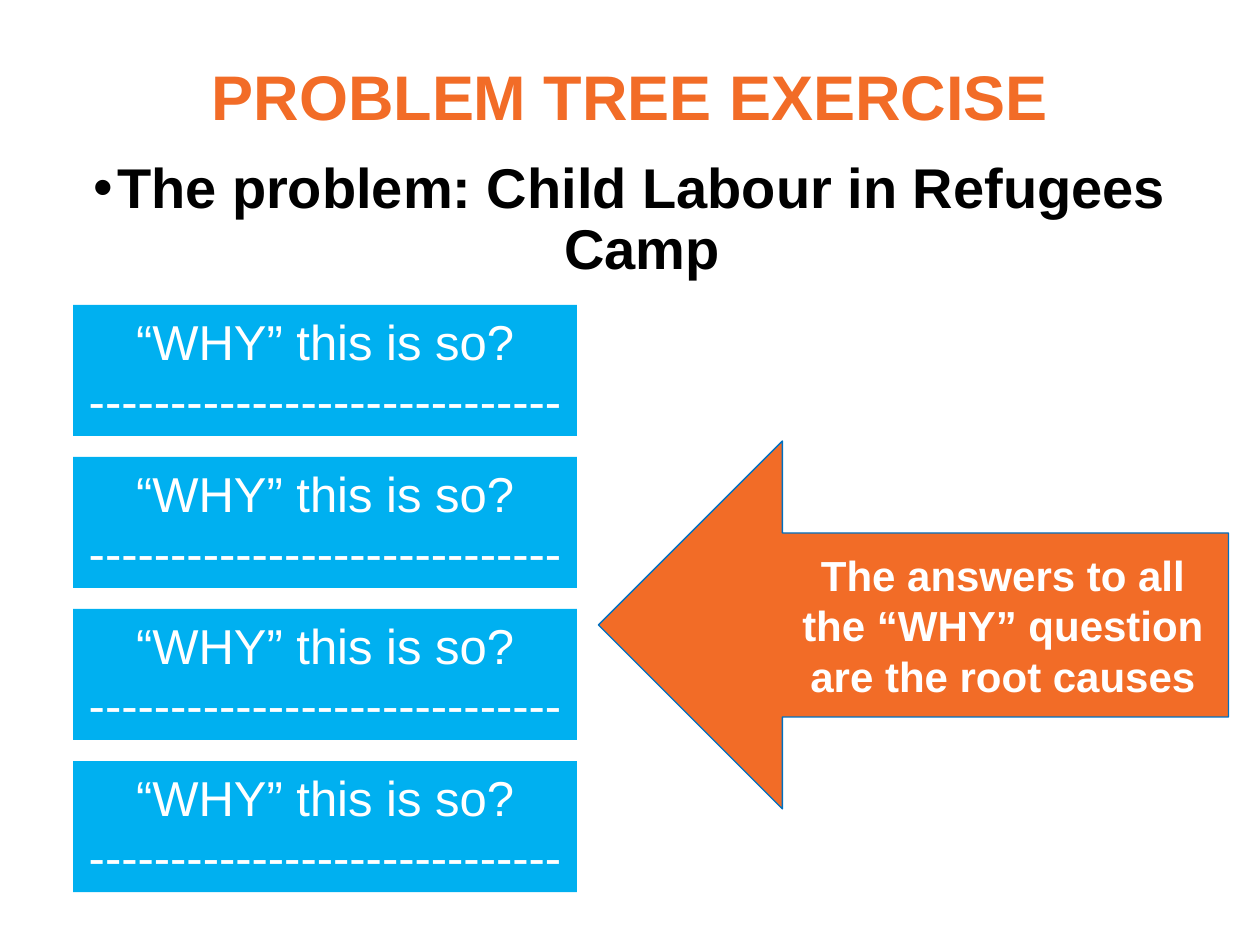
from pptx import Presentation
from pptx.dml.color import RGBColor
from pptx.enum.shapes import MSO_SHAPE
from pptx.enum.text import MSO_ANCHOR, MSO_AUTO_SIZE, PP_ALIGN
from pptx.oxml import parse_xml
from pptx.oxml.ns import nsdecls
from pptx.util import Inches, Pt

TITLE = "PROBLEM TREE EXERCISE"
ISSUE = "The problem: Child Labour in Refugees Camp"
WHYS = [["“WHY” this is so?", "-" * 29]] * 4
ANSWER = "The answers to all the “WHY” question are the root causes"

THEME = {
    "font": "Arial",
    "orange": RGBColor(0xF2, 0x6C, 0x27),
    "sky": RGBColor(0x00, 0xB0, 0xF0),
    "edge": RGBColor(0x00, 0x70, 0xC0),
    "black": RGBColor(0, 0, 0),
    "white": RGBColor(255, 255, 255),
    "title": Pt(36), "issue": Pt(32), "why": Pt(28), "answer": Pt(24),
}
TOP, LAST, LEFT, WIDE, HIGH = 2.42, 6.04, 0.58, 4, 1.04


def put(obj, vals):
    for name, val in vals.items():
        setattr(obj, name, val)


def place(shape, *box):
    names = ("left", "top", "width", "height")
    put(shape, dict(zip(names, map(Inches, box))))


def write(shape, lines, size, color, bold, **para):
    frame = shape.text_frame
    put(frame, {"text": "\n".join(lines), "word_wrap": True,
                "auto_size": MSO_AUTO_SIZE.NONE,
                "vertical_anchor": MSO_ANCHOR.MIDDLE})
    for p in frame.paragraphs:
        put(p, {"alignment": PP_ALIGN.CENTER, **para})
        for run in p.runs:
            put(run.font, {"name": THEME["font"], "size": THEME[size],
                           "bold": bold})
            run.font.color.rgb = THEME[color]


def indent(shape, left, first):
    pr = shape.text_frame.paragraphs[0]._p.get_or_add_pPr()
    pr.set("marL", str(Inches(left)))
    pr.set("indent", str(Inches(first)))
    return pr


def block(shapes, kind, box, fill, edge=None):
    shape = shapes.add_shape(kind, *map(Inches, box))
    shape.shadow.inherit = False
    shape.fill.solid()
    shape.fill.fore_color.rgb = THEME[fill]
    if edge:
        shape.line.color.rgb = THEME[edge]
        shape.line.width = Pt(0.75)
    else:
        shape.line.fill.background()
    return shape


def main():
    deck = Presentation()
    put(deck, {"slide_width": Inches(10), "slide_height": Inches(7.5)})
    slide = deck.slides.add_slide(deck.slide_layouts[1])
    title, issue = slide.placeholders

    place(title, 0.69, 0.07, 8.62, 1.45)
    write(title, [TITLE], "title", "orange", True, line_spacing=0.9)

    place(issue, 0.5, 1.38, 9, 0.75)
    write(issue, [ISSUE], "issue", "black", True,
          line_spacing=0.9, space_before=Pt(7.5))
    pr = indent(issue, 0.19, -0.19)
    pr.append(parse_xml(f'<a:buFont {nsdecls("a")} typeface="Arial"/>'))
    pr.append(parse_xml(f'<a:buChar {nsdecls("a")} char="•"/>'))

    group = slide.shapes.add_group_shape()
    step = (LAST - TOP) / (len(WHYS) - 1)
    for i, lines in enumerate(WHYS):
        box = (LEFT, TOP + i * step, WIDE, HIGH)
        card = block(group.shapes, MSO_SHAPE.RECTANGLE, box, "sky")
        write(card, lines, "why", "white", False)

    arrow = block(slide.shapes, MSO_SHAPE.LEFT_ARROW, (4.75, 3.5, 5, 2.92),
                  "orange", "edge")
    write(arrow, [ANSWER], "answer", "white", True)
    indent(arrow, 0.69, 0)

    deck.save("out.pptx")


if __name__ == "__main__":
    main()
